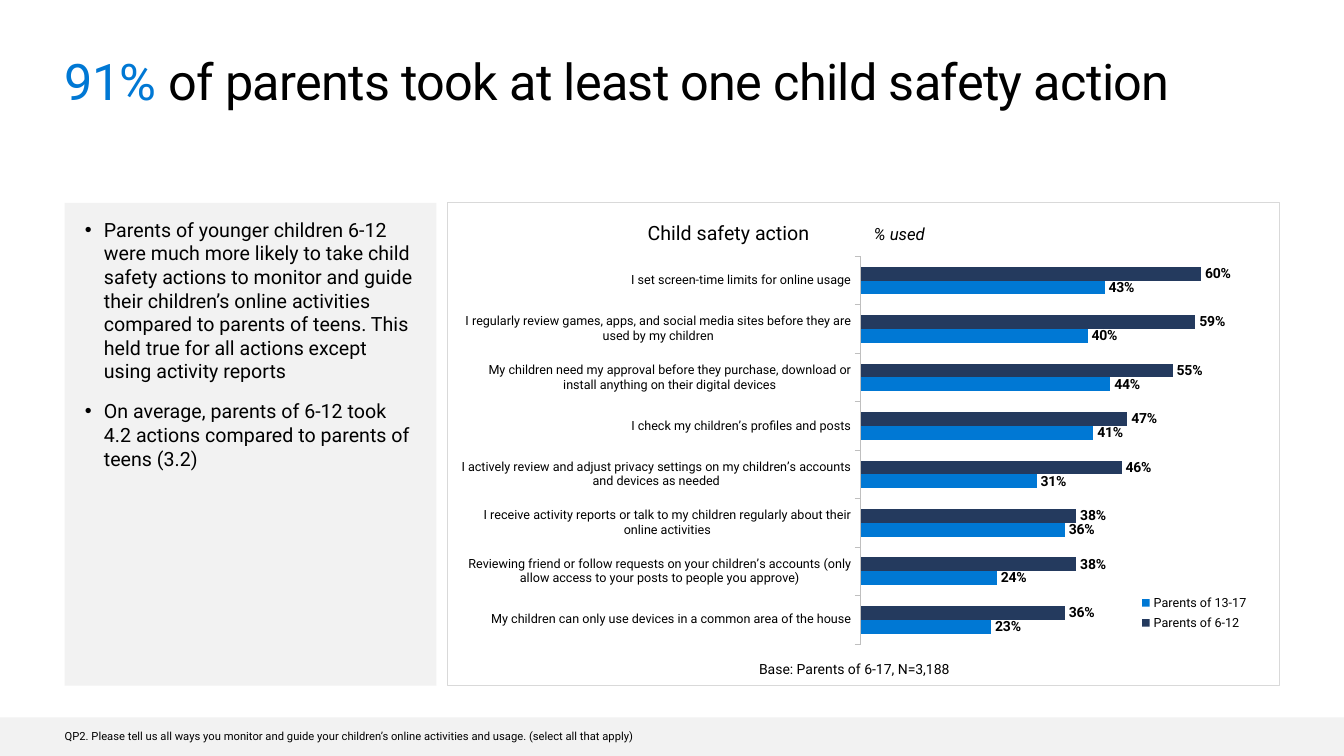
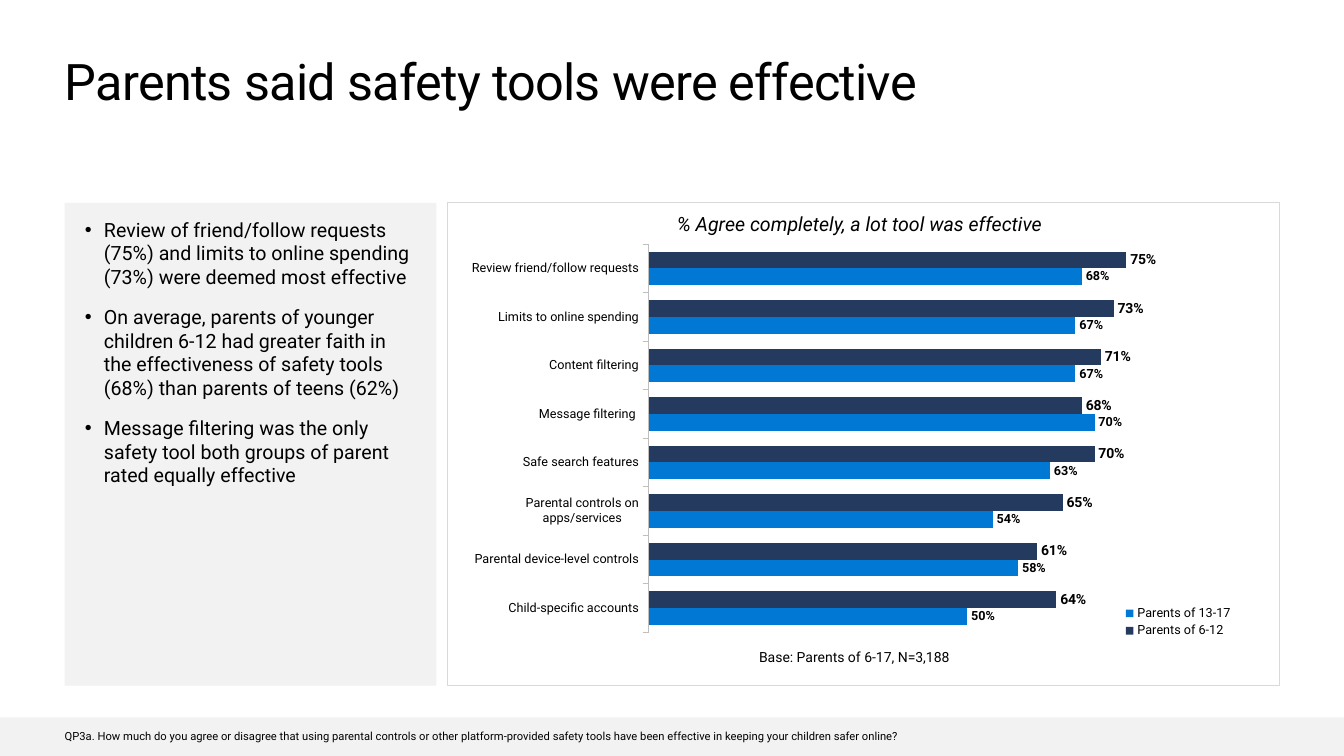
from dataclasses import dataclass
from typing import NamedTuple

from lxml import etree
from pptx import Presentation
from pptx import util as u
from pptx.chart import data as cd
from pptx.dml.color import RGBColor
from pptx.enum import chart as ec
from pptx.enum import shapes, text
from pptx.oxml import ns


@dataclass(frozen=True)
class Theme:
    font: str = "Roboto"
    black: str = "000000"
    blue: str = "0078D4"
    navy: str = "243A5E"
    gray: str = "F2F2F2"
    edge: str = "D9D9D9"
    axis: str = "BFBFBF"
    title: float = 36
    body: float = 14
    unit: float = 12
    base: float = 10
    small: float = 9
    note: float = 8


T = Theme()
LEFT, WIDE = 1.63, 30.61
TOP, HIGH = 5.11, 12.17
MID = text.MSO_ANCHOR.TOP
LOW = text.MSO_ANCHOR.BOTTOM


class Box(NamedTuple):
    x: float
    y: float
    w: float
    h: float

    def cm(self) -> list[u.Length]:
        return [u.Cm(n) for n in self]


class Run(NamedTuple):
    text: str
    size: float
    color: str = T.black
    slant: bool = False
    space: int = 0


class Label(NamedTuple):
    box: Box
    runs: list[Run]
    align: text.PP_ALIGN = text.PP_ALIGN.LEFT
    wrap: bool = False
    anchor: text.MSO_ANCHOR = MID


class Bars(NamedTuple):
    name: str
    color: str
    size: float
    vals: list[int]


class Graph(NamedTuple):
    box: Box
    cats: list[str]
    bars: list[Bars]
    gap: int
    top: float
    plot: Box
    key: Box
    side: ec.XL_LEGEND_POSITION


class Page(NamedTuple):
    title: list[Run]
    points: list[str]
    heads: list[Label]
    graph: Graph
    base: float
    note: str


def rgb(code: str) -> RGBColor:
    return RGBColor.from_string(code)


def style(font, size: float, color: str = T.black, bold: bool = False) -> None:
    font.name = T.font
    font.size = u.Pt(size)
    font.bold = bold
    font.color.rgb = rgb(color)


def write(para, run: Run) -> None:
    item = para.add_run()
    item.text = run.text
    style(item.font, run.size, run.color)
    item.font.italic = run.slant
    if run.space:
        item.font._element.set("spc", str(run.space))


def inset(frame, side: float = 0, edge: float = 0) -> None:
    frame.margin_left = frame.margin_right = u.Cm(side)
    frame.margin_top = frame.margin_bottom = u.Cm(edge)


def label(slide, item: Label) -> None:
    frame = slide.shapes.add_textbox(*item.box.cm()).text_frame
    inset(frame)
    frame.word_wrap = item.wrap
    frame.vertical_anchor = item.anchor
    para = frame.paragraphs[0]
    para.alignment = item.align
    for run in item.runs:
        write(para, run)


def rect(slide, box: Box, fill: str = "", line: str = ""):
    shape = slide.shapes.add_shape(shapes.MSO_SHAPE.RECTANGLE, *box.cm())
    shape.shadow.inherit = False
    if fill:
        shape.fill.solid()
        shape.fill.fore_color.rgb = rgb(fill)
    else:
        shape.fill.background()
    if line:
        shape.line.color.rgb = rgb(line)
        shape.line.width = u.Pt(0.75)
    else:
        shape.line.fill.background()
    return shape


def panel(slide, points: list[str]) -> None:
    frame = rect(slide, Box(LEFT, TOP, 9.37, HIGH), T.gray).text_frame
    inset(frame, 0.51, 0.38)
    frame.word_wrap = True
    frame.vertical_anchor = MID
    for i, point in enumerate(points):
        para = frame.add_paragraph() if i else frame.paragraphs[0]
        para.alignment = text.PP_ALIGN.LEFT
        para.space_after = u.Pt(12)
        props = para._p.get_or_add_pPr()
        props.set("marL", str(u.Cm(0.48)))
        props.set("indent", str(u.Cm(-0.48)))
        etree.SubElement(props, ns.qn("a:buFont")).set("typeface", "Arial")
        etree.SubElement(props, ns.qn("a:buChar")).set("char", "•")
        write(para, Run(point, T.body))


def place(node, box: Box, index: int, inner: bool = False) -> None:
    for old in node.findall(ns.qn("c:layout")):
        node.remove(old)
    layout = etree.Element(ns.qn("c:layout"))
    manual = etree.SubElement(layout, ns.qn("c:manualLayout"))
    rows = [("layoutTarget", "inner")] if inner else []
    rows += [("xMode", "edge"), ("yMode", "edge")]
    rows += [(k, str(v)) for k, v in zip("xywh", box)]
    for name, val in rows:
        etree.SubElement(manual, ns.qn(f"c:{name}")).set("val", val)
    node.insert(index, layout)


def draw(slide, graph: Graph) -> None:
    data = cd.CategoryChartData(number_format="0%")
    data.categories = graph.cats
    for bars in graph.bars:
        data.add_series(bars.name, [v / 100 for v in bars.vals])
    kind = ec.XL_CHART_TYPE.BAR_CLUSTERED
    chart = slide.shapes.add_chart(kind, *graph.box.cm(), data).chart
    chart.has_title = False
    style(chart.font, T.base)

    plot = chart.plots[0]
    plot.gap_width = graph.gap
    plot.overlap = 0
    plot.vary_by_categories = False
    for series, bars in zip(plot.series, graph.bars):
        series.format.fill.solid()
        series.format.fill.fore_color.rgb = rgb(bars.color)
        series.invert_if_negative = False
        tags = series.data_labels
        tags.show_value = True
        tags.position = ec.XL_LABEL_POSITION.OUTSIDE_END
        tags.number_format = "0%"
        tags.number_format_is_linked = False
        style(tags.font, bars.size, bold=True)

    axis = chart.category_axis
    axis.reverse_order = True
    axis.has_major_gridlines = False
    axis.major_tick_mark = ec.XL_TICK_MARK.OUTSIDE
    axis.format.line.color.rgb = rgb(T.axis)
    axis.format.line.width = u.Pt(0.5)
    style(axis.tick_labels.font, T.small)
    scale = chart.value_axis
    scale.minimum_scale = 0
    scale.maximum_scale = graph.top
    scale.has_major_gridlines = False
    scale.visible = False

    chart.has_legend = True
    chart.legend.position = graph.side
    chart.legend.include_in_layout = False
    style(chart.legend.font, T.small)
    place(chart.legend._element, graph.key, 1)
    place(chart._chartSpace.chart.plotArea, graph.plot, 0, True)


def build(deck, page: Page) -> None:
    slide = deck.slides.add_slide(deck.slide_layouts[6])
    label(slide, Label(Box(LEFT, 1.27, WIDE, 1.55), page.title, wrap=True))
    rect(slide, Box(11.27, TOP, 20.98, HIGH), line=T.edge)
    rect(slide, Box(0, 18.08, 33.87, 0.97), T.gray)
    panel(slide, page.points)
    draw(slide, page.graph)
    base = Run("Base: Parents of 6-17, N=3,188", T.base)
    note = Run(page.note, T.note)
    for item in page.heads + [
        Label(Box(19.13, page.base, 4.83, 0.43), [base]),
        Label(Box(LEFT, 18.39, WIDE, 0.33), [note], wrap=True, anchor=LOW),
    ]:
        label(slide, item)


def pair(young: list[int], teen: list[int], size: float) -> list[Bars]:
    return [
        Bars("Parents of 6-12", T.navy, T.base, young),
        Bars("Parents of 13-17", T.blue, size, teen),
    ]


PAGES = [
    Page(
        [Run("91% ", T.title, T.blue, space=-50),
         Run("of parents took at least one child safety action", T.title, space=-50)],
        ["Parents of younger children 6-12 were much more likely to take child safety actions to monitor and guide their children’s online activities compared to parents of teens. This held true for all actions except using activity reports",
         "On average, parents of 6-12 took 4.2 actions compared to parents of teens (3.2)"],
        [Label(Box(16.23, 5.56, 4.17, 0.61), [Run("Child safety action", T.body)], text.PP_ALIGN.RIGHT),
         Label(Box(22.02, 5.64, 1.47, 0.51), [Run("% used", T.unit, slant=True)])],
        Graph(
            Box(11.63, 6.15, 20.07, 10.39),
            ["I set screen-time limits for online usage",
             "I regularly review games, apps, and social media sites before they are used by my children",
             "My children need my approval before they purchase, download or install anything on their digital devices",
             "I check my children’s profiles and posts",
             "I actively review and adjust privacy settings on my children’s accounts and devices as needed",
             "I receive activity reports or talk to my children regularly about their online activities",
             "Reviewing friend or follow requests on your children’s accounts (only allow access to your posts to people you approve)",
             "My children can only use devices in a common area of the house"],
            pair([60, 59, 55, 47, 46, 38, 38, 36], [43, 40, 44, 41, 31, 36, 24, 23], T.base),
            150, 0.7, Box(0.5, 0.03, 0.5, 0.94), Box(0.85, 0.84, 0.14, 0.11),
            ec.XL_LEGEND_POSITION.RIGHT),
        16.64,
        "QP2. Please tell us all ways you monitor and guide your children’s online activities and usage. (select all that apply)"),
    Page(
        [Run("Parents said safety tools were effective", T.title, space=-50)],
        ["Review of friend/follow requests (75%) and limits to online spending (73%) were deemed most effective",
         "On average, parents of younger children 6-12 had greater faith in the effectiveness of safety tools (68%) than parents of teens (62%)",
         "Message filtering was the only safety tool both groups of parent rated equally effective"],
        [Label(Box(16.46, 5.33, 10.41, 0.61),
               [Run("% Agree completely, a lot tool was effective", T.body, slant=True)],
               text.PP_ALIGN.CENTER, True)],
        Graph(
            Box(11.63, 5.84, 20.07, 10.41),
            ["Review friend/follow requests", "Limits to online spending",
             "Content filtering", "Message filtering ", "Safe search features",
             "Parental controls on apps/services", "Parental device-level controls",
             "Child-specific accounts"],
            pair([75, 73, 71, 68, 70, 65, 61, 64], [68, 67, 67, 70, 63, 54, 58, 50], T.small),
            90, 0.8, Box(0.235, 0.03, 0.64, 0.94), Box(0.83, 0.9, 0.14, 0.09),
            ec.XL_LEGEND_POSITION.LEFT),
        16.33,
        "QP3a. How much do you agree or disagree that using parental controls or other platform-provided safety tools have been effective in keeping your children safer online?"),
]


def main() -> None:
    deck = Presentation()
    deck.slide_width, deck.slide_height = u.Cm(33.87), u.Cm(19.05)
    for page in PAGES:
        build(deck, page)
    deck.save("out.pptx")


if __name__ == "__main__":
    main()
